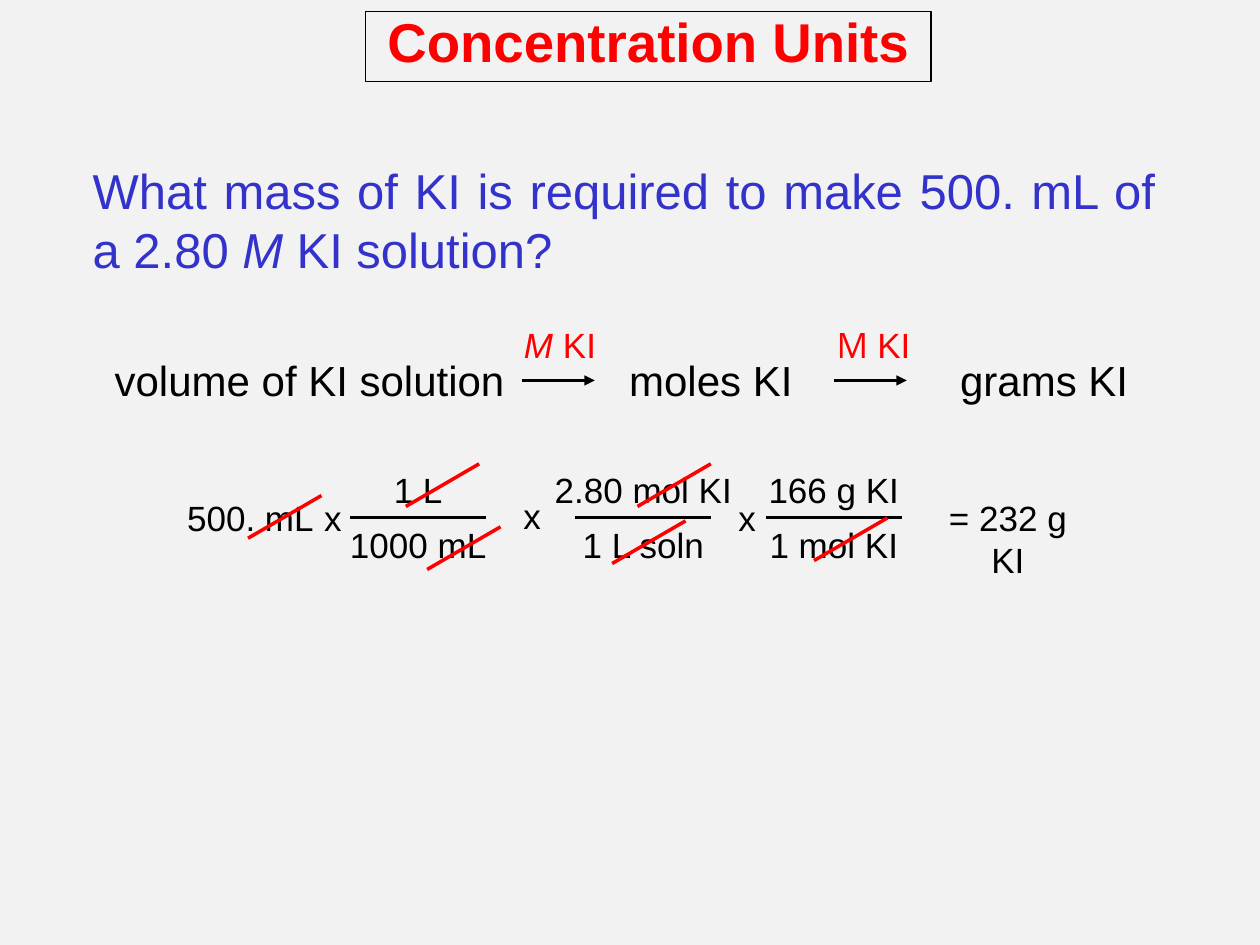
from dataclasses import dataclass

from lxml import etree
from pptx import Presentation
from pptx.dml.color import RGBColor
from pptx.enum.shapes import MSO_CONNECTOR, MSO_SHAPE
from pptx.enum.text import MSO_ANCHOR, MSO_AUTO_SIZE, PP_ALIGN
from pptx.oxml.ns import qn
from pptx.util import Cm, Pt

STRAIGHT = MSO_CONNECTOR.STRAIGHT
RECT = MSO_SHAPE.RECTANGLE
MIDDLE = MSO_ANCHOR.MIDDLE
GROW = MSO_AUTO_SIZE.SHAPE_TO_FIT_TEXT
CENTER, JUSTIFY = PP_ALIGN.CENTER, PP_ALIGN.JUSTIFY

BACKGROUND = RGBColor(0xF2, 0xF2, 0xF2)
BLACK = RGBColor(0x00, 0x00, 0x00)
RED = RGBColor(0xFF, 0x00, 0x00)
BLUE = RGBColor(0x33, 0x33, 0xCC)

# All positions are in centimetres
STEP_TOP, ARROW_Y, ARROW_LEN = 7.02, 7.67, 1.47
LABEL_TOP = 6.4
TERM_TOP, NUMERATOR_TOP, BAR_Y, BAR_LEN = 9.88, 9.32, 10.43, 2.74
STRIKE_W, STRIKE_H = 1.48, 0.86


@dataclass(frozen=True)
class Run:
    text: str
    italic: bool = False
    font: str = "Arial"


@dataclass(frozen=True)
class Label:
    runs: tuple[Run, ...]
    center: float
    top: float
    width: float
    height: float = 1.09
    size: float = 20
    color: RGBColor = BLACK
    align: PP_ALIGN = CENTER
    wrap: bool = False


@dataclass(frozen=True)
class Fraction:
    center: float
    numerator: str
    numerator_width: float
    denominator: str
    denominator_width: float
    times_center: float
    times_top: float = TERM_TOP


def add_runs(p, runs: tuple[Run, ...], size: float, color: RGBColor, bold: bool = False) -> None:
    for run in runs:
        r = p.add_run()
        r.text = run.text
        r.font.name = run.font
        r.font.size = Pt(size)
        r.font.bold = bold
        r.font.italic = run.italic
        r.font.color.rgb = color


def add_label(s, label: Label) -> None:
    left = label.center - label.width / 2
    sp = s.shapes.add_textbox(Cm(left), Cm(label.top), Cm(label.width), Cm(label.height))
    tf = sp.text_frame
    tf.word_wrap = label.wrap
    tf.auto_size = GROW
    if not label.wrap:
        # Single-line labels use the full box width
        tf.margin_left = tf.margin_right = Cm(0)
    p = tf.paragraphs[0]
    p.alignment = label.align
    add_runs(p, label.runs, label.size, label.color)


def add_line(s, x1: float, y1: float, x2: float, y2: float,
             color: RGBColor = BLACK, width: float = 2, arrow: bool = False) -> None:
    sp = s.shapes.add_connector(STRAIGHT, Cm(x1), Cm(y1), Cm(x2), Cm(y2))
    sp.line.color.rgb = color
    sp.line.width = Pt(width)
    if arrow:
        etree.SubElement(sp.line._get_or_add_ln(), qn("a:tailEnd"), type="triangle")
    etree.SubElement(sp._element.spPr, qn("a:effectLst"))


def add_fraction(s, f: Fraction) -> None:
    add_label(s, Label((Run(f.numerator),), f.center, NUMERATOR_TOP, f.numerator_width))
    add_label(s, Label((Run(f.denominator),), f.center, BAR_Y, f.denominator_width))
    add_line(s, f.center - BAR_LEN / 2, BAR_Y, f.center + BAR_LEN / 2, BAR_Y)
    add_label(s, Label((Run("x"),), f.times_center, f.times_top, 0.86))


def add_title(s, text: str) -> None:
    sp = s.shapes.add_shape(RECT, Cm(7.37), Cm(0.23), Cm(11.4), Cm(1.42))
    sp.shadow.inherit = False
    sp.fill.background()
    sp.line.color.rgb = BLACK
    sp.line.width = Pt(0.75)
    tf = sp.text_frame
    tf.word_wrap = True
    tf.vertical_anchor = MIDDLE
    p = tf.paragraphs[0]
    p.alignment = CENTER
    p.line_spacing = 0.8
    add_runs(p, (Run(text),), 31.2, RED, bold=True)


QUESTION = Label(
    (Run("What mass of KI is required to make 500. mL of a 2.80 "),
     Run("M", italic=True), Run(" KI solution?")),
    12.58, 3.11, 21.92, 2.62, 28, BLUE, JUSTIFY, True)

STEPS = [("volume of KI solution", 6.24, 8.38),
         ("moles KI", 14.33, 3.81),
         ("grams KI", 21.05, 3.89)]
ARROW_STARTS = [10.52, 16.81]

LABELS = [
    Label((Run("M", italic=True), Run(" KI")), 11.29, LABEL_TOP, 1.96, color=RED),
    Label((Run("M ", font="Open Sans"), Run("KI")), 17.61, LABEL_TOP, 2.24, color=RED),
    Label((Run("500. mL"),), 5.05, TERM_TOP, 3.05),
    Label((Run("= 232 g KI"),), 20.32, TERM_TOP, 3.73, wrap=True),
]

FRACTIONS = [
    Fraction(8.43, "1 L", 1.5, "1000 mL", 3.25, 6.71),
    Fraction(12.97, "2.80 mol KI", 4.06, "1 L soln", 2.97, 10.73, 9.85),
    Fraction(16.81, "166 g KI", 3.12, "1 mol KI", 3.1, 15.06),
]

# Lower left end of each cancelled unit's stroke
STRIKES = [(5, 10.85), (8.61, 11.48), (8.18, 10.21),
           (12.34, 11.36), (12.85, 10.21), (16.41, 11.3)]


def main() -> None:
    prs = Presentation()
    prs.slide_width, prs.slide_height = Cm(25.4), Cm(19.05)
    s = prs.slides.add_slide(prs.slide_layouts[6])
    s.background.fill.solid()
    s.background.fill.fore_color.rgb = BACKGROUND

    # Question and conversion path
    add_label(s, QUESTION)
    for text, center, width in STEPS:
        add_label(s, Label((Run(text),), center, STEP_TOP, width, 1.27, 24))
    for x in ARROW_STARTS:
        add_line(s, x, ARROW_Y, x + ARROW_LEN, ARROW_Y, width=1.75, arrow=True)

    # Calculation with cancelled units
    for label in LABELS:
        add_label(s, label)
    for fraction in FRACTIONS:
        add_fraction(s, fraction)
    for x, y in STRIKES:
        add_line(s, x, y, x + STRIKE_W, y - STRIKE_H, RED)

    add_title(s, "Concentration Units")
    prs.save("out.pptx")


if __name__ == "__main__":
    main()
